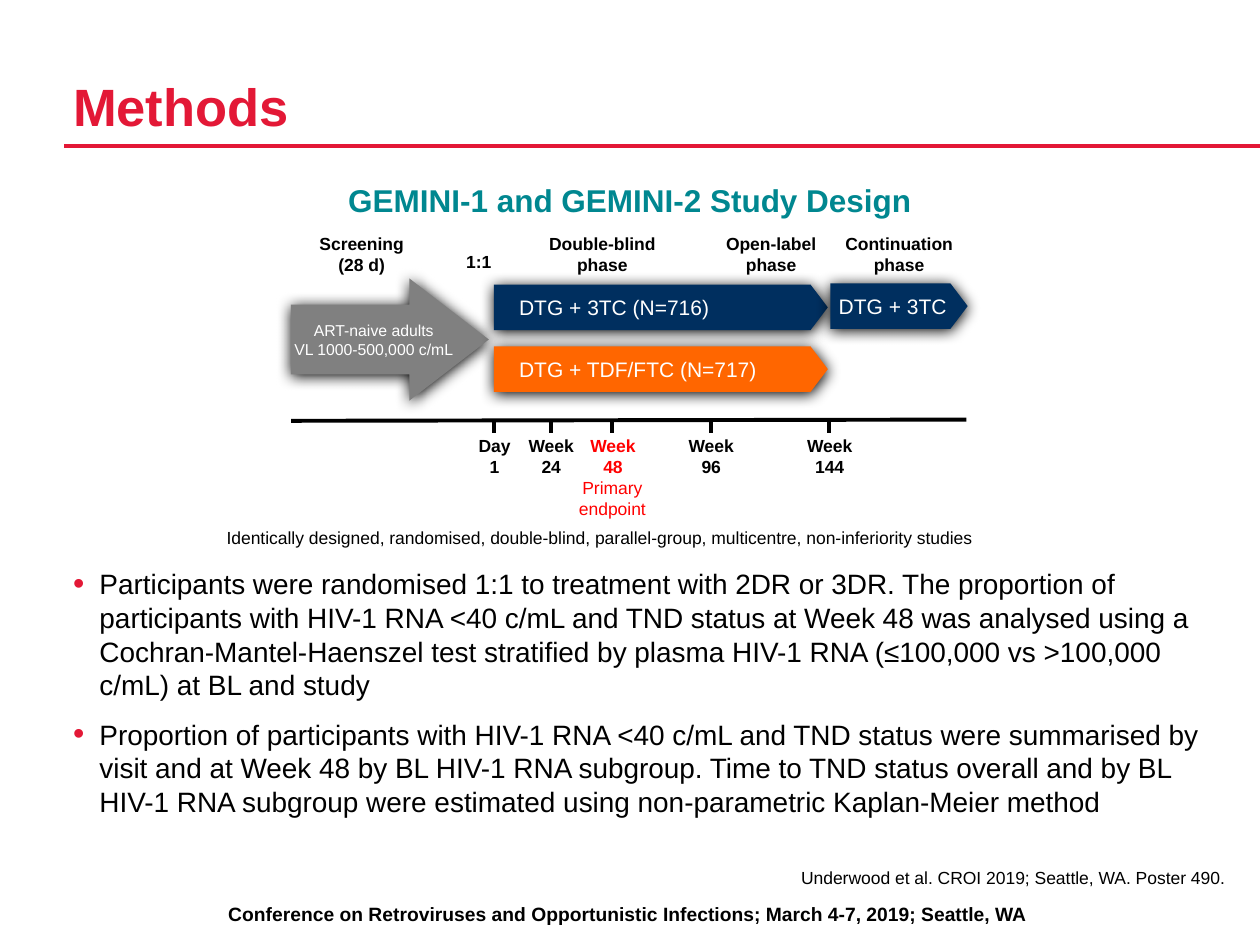
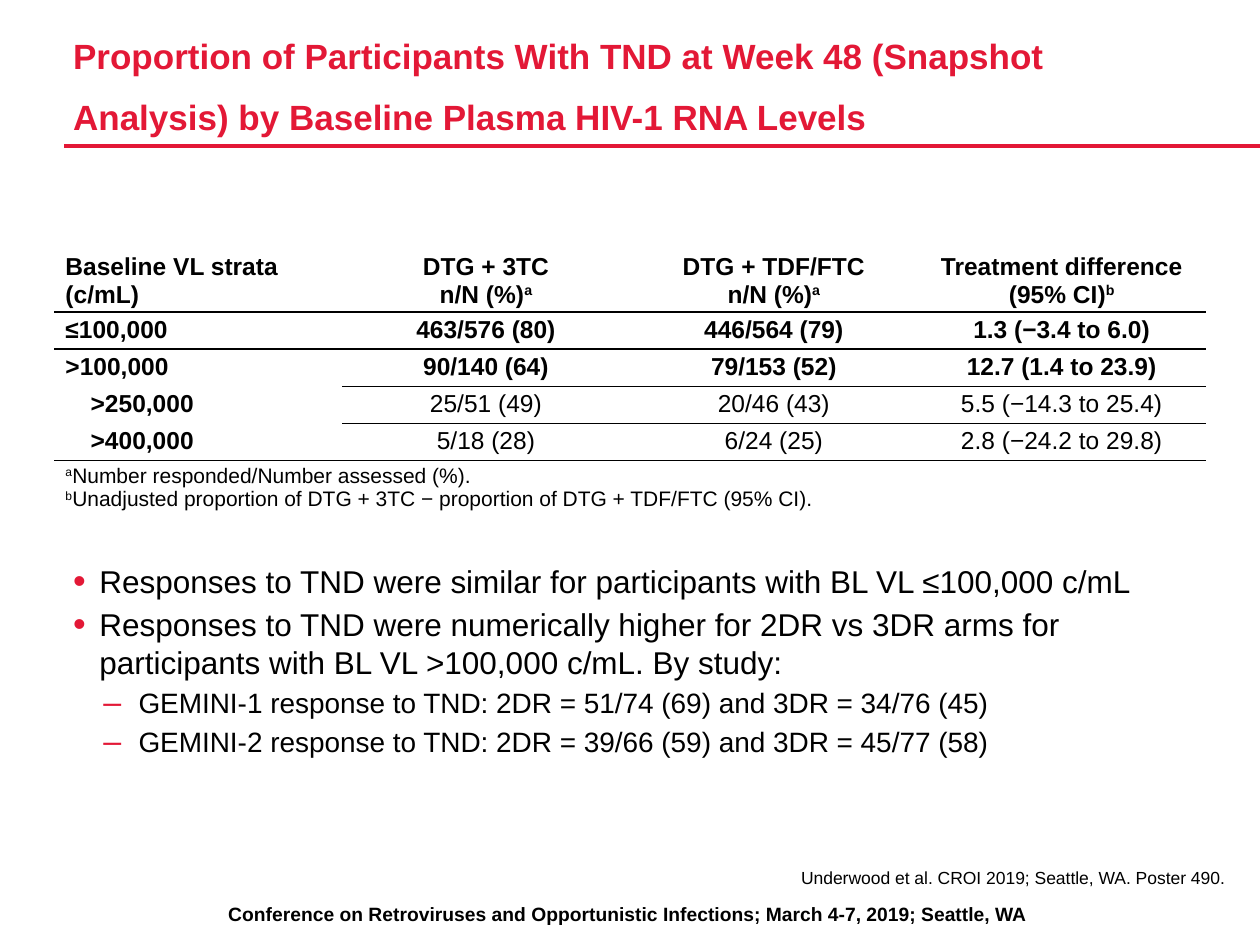
from lxml import etree
from pptx import Presentation
from pptx.dml.color import RGBColor
from pptx.enum import shapes, text
from pptx.oxml import ns
from pptx.util import Inches, Pt

FONT = "Arial"
RED, ALERT, TEAL = "E31836", "FF0000", "008790"
NAVY, ORANGE, GREY = "002F5F", "FF6600", "808080"
BLACK, WHITE = "000000", "FFFFFF"
LEFT, CENTER, RIGHT = text.PP_ALIGN.LEFT, text.PP_ALIGN.CENTER, text.PP_ALIGN.RIGHT
TOP, MIDDLE, BOTTOM = text.MSO_ANCHOR.TOP, text.MSO_ANCHOR.MIDDLE, text.MSO_ANCHOR.BOTTOM
INSETS, NO_INSETS = (0.1, 0.05, 0.1, 0.05), (0, 0, 0, 0)
NO_TABLE_STYLE = "{2D5ABB26-0587-4C30-8999-92F81FD0307C}"


def rgb(value):
    return RGBColor.from_string(value)


def add_xml(parent, tag, **attributes):
    return etree.SubElement(parent, ns.qn(tag), attributes)


def add_color(parent, value):
    return add_xml(add_xml(parent, "a:solidFill"), "a:srgbClr", val=value)


def write(para, content, size=10, color=BLACK, bold=False, align=LEFT,
          before=0, after=0, exact=None, bullet=None, margin=0, hang=0):
    """Fill a paragraph; content is text or a list of (text, raised) pairs."""
    para.alignment = align
    para.space_before, para.space_after = Pt(before), Pt(after)
    if exact:
        para.line_spacing = Pt(exact)
    if bullet:
        props = para._p.get_or_add_pPr()
        props.set("marL", str(Inches(margin)))
        props.set("indent", str(-Inches(hang)))
        add_xml(add_xml(props, "a:buClr"), "a:srgbClr", val=RED)
        add_xml(props, "a:buSzPct", val="115000")
        add_xml(props, "a:buFont", typeface=FONT)
        add_xml(props, "a:buChar", char=bullet)
    pairs = [(content, False)] if isinstance(content, str) else content
    for words, raised in pairs:
        for number, line in enumerate(words.split("\n")):
            if number:
                para.add_line_break()
            if not line:
                continue
            span = para.add_run()
            span.text = line
            font = span.font
            font.name, font.size, font.bold = FONT, Pt(size), bold
            font.color.rgb = rgb(color)
            if raised:
                span._r.get_or_add_rPr().set("baseline", "30000")


class Page:
    """The house style and the slide being built."""

    def __init__(self, deck, title, title_size):
        self.slide = deck.slides.add_slide(deck.slide_layouts[6])
        self.text((0.06, 7.11, 9.85, 0.29),
                  "Conference on Retroviruses and Opportunistic Infections; "
                  "March 4-7, 2019; Seattle, WA", size=11, bold=True, align=CENTER)
        self.line((0.51, 1.16), (10, 1.16), RED, 2)
        self.text((0.58, 0.17, 8.25, 0.92), title, insets=NO_INSETS, anchor=BOTTOM,
                  size=title_size, color=RED, bold=True, exact=35)
        self.text((0.58, 6.88, 9.14, 0.2),
                  "Underwood et al. CROI 2019; Seattle, WA. Poster 490.",
                  insets=NO_INSETS, align=RIGHT)

    def frame(self, shape, insets, anchor, wrap):
        frame = shape.text_frame
        frame.word_wrap, frame.vertical_anchor = wrap, anchor
        (frame.margin_left, frame.margin_top,
         frame.margin_right, frame.margin_bottom) = map(Inches, insets)
        return frame

    def text(self, place, content, insets=INSETS, anchor=TOP, wrap=True, **style):
        box = self.slide.shapes.add_textbox(*map(Inches, place))
        write(self.frame(box, insets, anchor, wrap).paragraphs[0], content, **style)

    def bullets(self, place, items):
        """Each item is its text and its paragraph style."""
        box = self.slide.shapes.add_textbox(*map(Inches, place))
        frame = self.frame(box, NO_INSETS, TOP, True)
        for number, (content, style) in enumerate(items):
            para = frame.add_paragraph() if number else frame.paragraphs[0]
            write(para, content, after=3, **style)

    def line(self, start, end, color=BLACK, width=2.25):
        line = self.slide.shapes.add_connector(
            shapes.MSO_CONNECTOR.STRAIGHT, *map(Inches, start + end))
        line.line.color.rgb, line.line.width = rgb(color), Pt(width)
        add_xml(line._element.spPr, "a:effectLst")

    def arrow(self, kind, place, adjustments, fill, content, **style):
        shape = self.slide.shapes.add_shape(kind, *map(Inches, place))
        for number, value in enumerate(adjustments):
            shape.adjustments[number] = value
        shape.fill.solid()
        shape.fill.fore_color.rgb = rgb(fill)
        shape.line.fill.background()
        shape.shadow.inherit = False
        effects = shape._element.spPr.find(ns.qn("a:effectLst"))
        shadow = add_xml(effects, "a:outerShdw", blurRad=str(Pt(8.5)),
                         dist=str(Pt(1)), dir="5400000", rotWithShape="0")
        add_xml(shadow, "a:srgbClr", val=BLACK)
        frame = self.frame(shape, (0.2, 0.05, 0.1, 0.05), MIDDLE, False)
        write(frame.paragraphs[0], content, color=WHITE, **style)

    def table(self, place, heights, columns):
        table = self.slide.shapes.add_table(
            len(heights), columns, *map(Inches, place)).table
        table.first_row = table.horz_banding = False
        table._tbl.tblPr.find(ns.qn("a:tableStyleId")).text = NO_TABLE_STYLE
        for row, height in zip(table.rows, heights):
            row.height = Inches(height)
        return table

    def cell(self, cell, content, left=0.01, bottom=0.03, anchor=TOP, rule=0, **style):
        cell.fill.background()
        cell.vertical_anchor = anchor
        cell.margin_left, cell.margin_right = Inches(left), Inches(0.01)
        cell.margin_top, cell.margin_bottom = Inches(0.03), Inches(bottom)
        write(cell.text_frame.paragraphs[0], content, **style)
        if rule:
            border = etree.Element(ns.qn("a:lnB"), w=str(Pt(rule)))
            add_color(border, BLACK)
            cell._tc.get_or_add_tcPr().insert(0, border)


def build_methods(deck):
    page = Page(deck, "Methods", 30)
    page.text((1.18, 1.39, 7.64, 0.5), "GEMINI-1 and GEMINI-2 Study Design",
              size=18, color=TEAL, bold=True, align=CENTER)

    # Phase headings
    for left, width, heading in [(2.41, 0.92, "Screening\n(28 d)"),
                                 (3.92, 1.72, "Double-blind\nphase"),
                                 (5.65, 0.94, "Open-label\nphase"),
                                 (6.59, 1.09, "Continuation\nphase")]:
        page.text((left, 1.8, width, 0.44), heading, bold=True, align=CENTER)
    page.text((3.67, 1.99, 0.26, 0.17), "1:1", insets=NO_INSETS, bold=True, align=CENTER)

    # Study arms
    page.arrow(shapes.MSO_SHAPE.RIGHT_ARROW, (2.31, 2.21, 1.57, 0.97), (0.57, 0.65), GREY,
               "ART-naive adults\nVL 1000-500,000 c/mL", size=9, align=CENTER)
    for left, top, width, fill, arm, align in [
            (3.92, 2.26, 2.65, NAVY, "DTG + 3TC (N=716)", LEFT),
            (3.92, 2.75, 2.65, ORANGE, "DTG + TDF/FTC (N=717)", LEFT),
            (6.59, 2.25, 1.09, NAVY, "DTG + 3TC", RIGHT)]:
        page.arrow(shapes.MSO_SHAPE.PENTAGON, (left, top, width, 0.36), (0.38,), fill,
                   arm, size=12, align=align)

    # Timeline
    page.line((2.31, 3.34), (7.67, 3.33))
    for x, visit, color in [(3.92, "Day\n1", BLACK), (4.37, "Week\n24", BLACK),
                            (4.86, "Week\n48", ALERT), (5.64, "Week\n96", BLACK),
                            (6.58, "Week\n144", BLACK)]:
        page.line((x, 3.33), (x, 3.44))
        page.text((x - 0.28, 3.4, 0.57, 0.44), visit, wrap=False,
                  color=color, bold=True, align=CENTER)
    page.text((4.14, 3.74, 1.44, 0.44), "Primary\nendpoint", color=ALERT, align=CENTER)
    page.text((1.7, 4.13, 6.6, 0.28),
              "Identically designed, randomised, double-blind, parallel-group, "
              "multicentre, non-inferiority studies")

    # Analysis
    point = dict(size=16, bullet="•", margin=0.21, hang=0.21)
    page.bullets((0.58, 4.5, 9.14, 2.03), [
        ("Participants were randomised 1:1 to treatment with 2DR or 3DR. The proportion of "
         "participants with HIV-1 RNA <40 c/mL and TND status at Week 48 was analysed using a "
         "Cochran-Mantel-Haenszel test stratified by plasma HIV-1 RNA (≤100,000 vs >100,000 "
         "c/mL) at BL and study", point),
        ("Proportion of participants with HIV-1 RNA <40 c/mL and TND status were summarised by "
         "visit and at Week 48 by BL HIV-1 RNA subgroup. Time to TND status overall and by BL "
         "HIV-1 RNA subgroup were estimated using non-parametric Kaplan-Meier method",
         dict(point, before=6))])


def build_results(deck):
    page = Page(deck, "Proportion of Participants With TND at Week 48 (Snapshot Analysis) "
                      "by Baseline Plasma HIV-1 RNA Levels", 20)

    # Response by viral load stratum
    header = ["Baseline VL strata\n(c/mL)",
              [("DTG + 3TC\nn/N (%)", False), ("a", True)],
              [("DTG + TDF/FTC\nn/N (%)", False), ("a", True)],
              [("Treatment difference\n(95% CI)", False), ("b", True)]]
    strata = [["≤100,000", "463/576 (80)", "446/564 (79)", "1.3 (−3.4 to 6.0)"],
              [">100,000", "90/140 (64)", "79/153 (52)", "12.7 (1.4 to 23.9)"],
              [">250,000", "25/51 (49)", "20/46 (43)", "5.5 (−14.3 to 25.4)"],
              [">400,000", "5/18 (28)", "6/24 (25)", "2.8 (−24.2 to 29.8)"]]
    rows = [header] + strata
    table = page.table((0.43, 1.95, 9.14, 2.13), [0.49] + [0.28] * 4 + [0.5], len(header))
    for r, row in enumerate(rows):
        for c, content in enumerate(row):
            subgroup = r > 2
            rule = 1 if r < 2 else 0.5
            if c == 0 and r in (2, 3):
                rule = 0
            label_left = 0.29 if subgroup else 0.09
            page.cell(table.cell(r, c), content, size=14, rule=rule,
                      bold=c == 0 or not subgroup,
                      left=0.01 if c else label_left,
                      align=CENTER if c else LEFT,
                      anchor=TOP if r else BOTTOM)
    notes = table.cell(len(rows), 0)
    notes.merge(table.cell(len(rows), len(header) - 1))
    page.cell(notes, [("a", True), ("Number responded/Number assessed (%).\n", False),
                      ("b", True), ("Unadjusted proportion of DTG + 3TC − proportion of "
                                    "DTG + TDF/FTC (95% CI).", False)],
              size=12, left=0.09, bottom=0)

    # Findings
    point = dict(size=18, bullet="•", margin=0.21, hang=0.21)
    detail = dict(size=16, bullet="–", margin=0.52, hang=0.28)
    page.bullets((0.58, 4.46, 9.14, 1.94), [
        ("Responses to TND were similar for participants with BL VL ≤100,000 c/mL", point),
        ("Responses to TND were numerically higher for 2DR vs 3DR arms for participants "
         "with BL VL >100,000 c/mL. By study:", point),
        ("GEMINI-1 response to TND: 2DR = 51/74 (69) and 3DR = 34/76 (45)", detail),
        ("GEMINI-2 response to TND: 2DR = 39/66 (59) and 3DR = 45/77 (58)", detail)])


def main():
    deck = Presentation()
    deck.slide_width, deck.slide_height = Inches(10), Inches(7.5)
    build_methods(deck)
    build_results(deck)
    deck.save("out.pptx")


if __name__ == "__main__":
    main()
